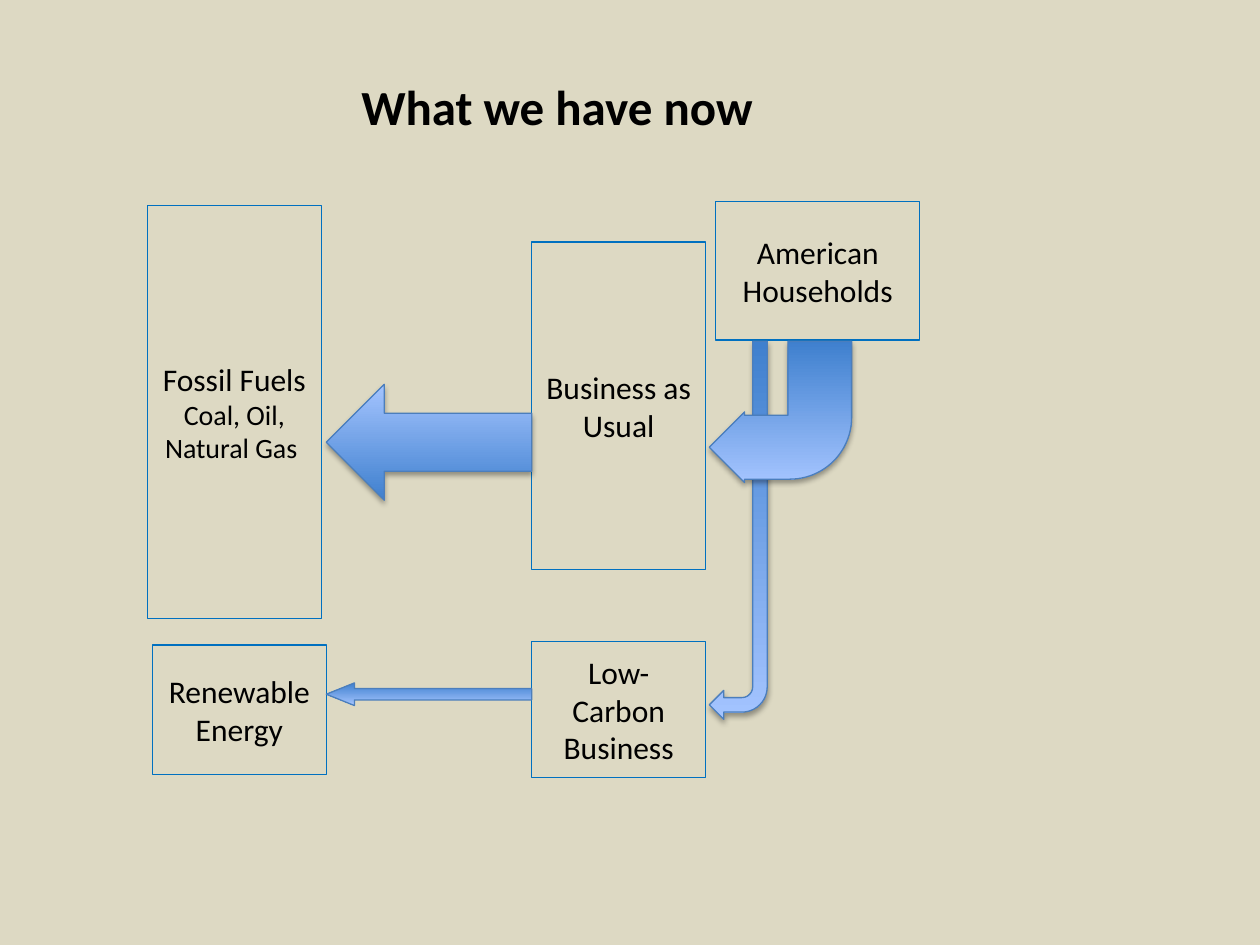
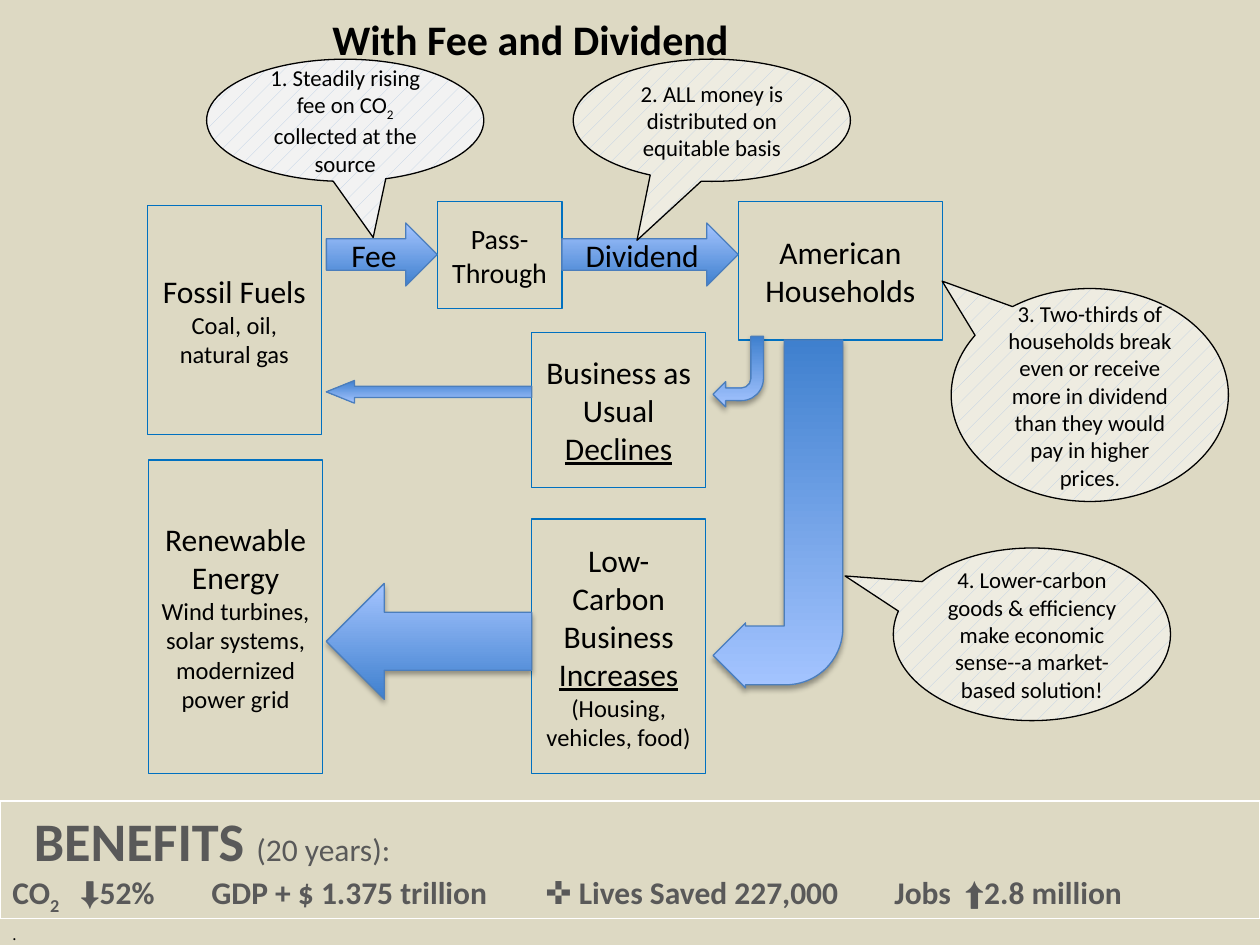
from lxml import etree
from pptx import Presentation
from pptx import util as u
from pptx.dml.color import RGBColor
from pptx.enum import dml, shapes, text
from pptx.oxml.ns import qn

SLIDE_W, SLIDE_H = 10, 7.5
FONT = "Calibri"
SAND = RGBColor(0xDD, 0xD9, 0xC3)
BLACK = RGBColor(0, 0, 0)
WHITE = RGBColor(0xFF, 0xFF, 0xFF)
GREY = RGBColor(0x59, 0x59, 0x59)
BOX_BLUE = RGBColor(0x00, 0x70, 0xC0)
ARROW_DARK = RGBColor(0x3F, 0x80, 0xCE)
ARROW_LIGHT = RGBColor(0xA4, 0xC4, 0xFF)
ARROW_EDGE = RGBColor(0x4B, 0x7E, 0xBC)
HATCH = RGBColor(0xB9, 0xCD, 0xE5)
PALE = RGBColor(0xF2, 0xF2, 0xF2)
CREAM = RGBColor(0xEE, 0xEC, 0xE1)

KIND = shapes.MSO_SHAPE

# Columns of the diagram: (left, width)
ENERGY = (1.17, 1.38)
BUSINESS = (4.22, 1.38)
FLOW = (2.59, 1.63)       # between energy and business
FEE = (2.59, 0.88)
PASS_THROUGH = (3.47, 0.99)
DIVIDEND = (4.46, 1.4)
CALLOUT_W = 2.2

# Arrow proportions
WIDE, NARROW = 0.92, 0.18
NARROW_HEAD = [0.5, 1.242]
WIDE_BEND = [0.452, 0.25, 0.25, 0.438]

# Text: paragraphs of runs (text, size, style), style being "", "u", "b" or "sub"
# Boxes: (column, top, height, paragraphs)
# Flows: (top, height); bends: (left, top, width, height, adjustments)
NOW = {
    "title": ("What we have now", 28, (1.2, 0.56, 6.44, 0.57)),
    "boxes": [
        (ENERGY, 1.63, 3.28, [[("Fossil Fuels", 18, "")],
                              [("Coal, Oil, Natural Gas ", 16, "")]]),
        ((1.21, 1.38), 5.12, 1.03, [[("Renewable Energy", 18, "")]]),
        ((5.68, 1.62), 1.6, 1.1, [[("American Households", 18, "")]]),
        (BUSINESS, 1.92, 2.6, [[("Business as Usual", 18, "")]]),
        (BUSINESS, 5.09, 1.08, [[("Low- Carbon Business", 18, "")]]),
    ],
    "payments": [],
    "bends": [(5.63, 2.71, 0.46, 3, []), (5.63, 2.71, 1.13, 1.12, WIDE_BEND)],
    "flows": [(3.05, WIDE), (5.42, NARROW)],
    "callouts": [],
}

DIVIDEND_PLAN = {
    "title": ("With Fee and Dividend", 24, (0.99, 0.06, 6.44, 0.5)),
    "boxes": [
        (ENERGY, 1.63, 1.82, [[("Fossil Fuels ", 18, "")],
                              [("Coal, oil, natural gas", 14, "")]]),
        ((1.18, 1.38), 3.65, 2.49, [
            [("Renewable Energy", 18, "")],
            [("Wind turbines, solar systems, modernized power grid", 14, "")]]),
        (PASS_THROUGH, 1.6, 0.85, [[("Pass-", 16, "")], [("Through", 16, "")]]),
        ((5.86, 1.62), 1.6, 1.1, [[("American Households", 18, "")]]),
        (BUSINESS, 2.64, 1.23, [[("Business as Usual ", 18, ""), ("Declines", 18, "u")]]),
        (BUSINESS, 4.12, 2.02, [
            [("Low-Carbon Business ", 18, ""), ("Increases", 18, "u")],
            [("(Housing, vehicles, food)", 14, "")]]),
    ],
    "payments": [(FEE, "Fee"), (DIVIDEND, "Dividend")],
    "bends": [(5.66, 2.67, 0.4, 0.56, []), (5.66, 2.7, 1.03, 2.76, WIDE_BEND)],
    "flows": [(4.63, WIDE), (3.02, NARROW)],
    # (left, top, height, tip of the tail, background, runs)
    "callouts": [
        (1.64, 0.47, 0.97, (0.101, 0.959), PALE,
         [("1. Steadily rising fee on CO", 13, ""), ("2 ", 13, "sub"),
          ("collected at the source", 13, "")]),
        (4.55, 0.47, 0.97, (-0.27, 0.982), CREAM,
         [("2. ALL money is distributed on equitable basis", 13, "")]),
        (7.55, 2.29, 1.69, (-0.533, -0.535), CREAM,
         [("3. Two-thirds of households break even or receive more in "
           "dividend than they would pay in higher prices", 13, ""), (".", 12, "")]),
        (7.09, 4.35, 1.37, (-0.674, -0.338), CREAM,
         [("4. Lower-carbon goods & efficiency make economic "
           "sense--a market-based solution!", 13, "")]),
    ],
}

BENEFITS = [
    [("BENEFITS ", 31, "b"), ("(20 years):", 18, "")],
    [("CO", 18, "b"), ("2", 18, "sub b"), ("\t", 18, "b"), ("⬇", 18, "b"),
     ("52%\tGDP + $ 1.375 trillion\t", 18, "b"), ("✜", 18, "b"),
     (" Lives Saved 227,000\tJobs\t", 18, "b"), ("⬆", 18, "b"),
     ("2.8 million", 18, "b")],
]
SYMBOLS = "⬇✜⬆"
BENEFIT_TABS = [0.54, 1.58, 4.23, 7.0, 7.56]
BAND_TOP, BAND_H = 6.36, 0.93


def write(frame, paragraphs, colour=BLACK, align=text.PP_ALIGN.CENTER, font=FONT):
    frame.word_wrap = True
    for i, runs in enumerate(paragraphs):
        paragraph = frame.add_paragraph() if i else frame.paragraphs[0]
        paragraph.alignment = align
        for words, size, style in runs:
            run = paragraph.add_run()
            run.text = words
            run.font.name = "Arial" if words in SYMBOLS else font
            run.font.size = u.Pt(size)
            run.font.color.rgb = colour
            run.font.bold = "b" in style.split()
            run.font.underline = style == "u"
            if "sub" in style:
                run.font._element.set("baseline", "-25000")


def add_part(slide, kind, left, top, width, height, edge, adjust=(), weight=0.75):
    part = slide.shapes.add_shape(kind, *map(u.Inches, (left, top, width, height)))
    part.shadow.inherit = False
    part.fill.background()
    part.line.color.rgb = edge
    part.line.width = u.Pt(weight)
    for i, value in enumerate(adjust):
        part.adjustments[i] = value
    return part


def add_arrow(slide, kind, place, adjust=(), flip="", shadow=False):
    arrow = add_part(slide, kind, *place, ARROW_EDGE, adjust)
    arrow.fill.gradient()
    arrow.fill.gradient_angle = 90
    for stop, colour in zip(arrow.fill.gradient_stops, (ARROW_DARK, ARROW_LIGHT)):
        stop.color.rgb = colour
    properties = arrow._element.spPr
    for axis in flip:
        properties.find(qn("a:xfrm")).set("flip" + axis, "1")
    if shadow:
        cast = etree.SubElement(
            properties.find(qn("a:effectLst")), qn("a:outerShdw"), blurRad="40000",
            dist="23000", dir="5400000", rotWithShape="0")
        tint = etree.SubElement(cast, qn("a:srgbClr"), val="000000")
        etree.SubElement(tint, qn("a:alpha"), val="35000")
    return arrow


def add_title(slide, words, size, place):
    title = slide.shapes.title
    title.left, title.top, title.width, title.height = map(u.Inches, place)
    title.text_frame.vertical_anchor = text.MSO_ANCHOR.TOP
    title.text_frame.auto_size = text.MSO_AUTO_SIZE.NONE
    write(title.text_frame, [[(words, size, "b")]])


def add_diagram(slide, plan):
    add_title(slide, *plan["title"])
    for (left, width), top, height, paragraphs in plan["boxes"]:
        box = add_part(slide, KIND.RECTANGLE, left, top, width, height, BOX_BLUE)
        write(box.text_frame, paragraphs)
    for (left, width), label in plan["payments"]:
        payment = add_arrow(slide, KIND.RIGHT_ARROW, (left, 1.77, width, 0.5))
        write(payment.text_frame, [[(label, 18, "")]])
    for *place, adjust in plan["bends"]:
        add_arrow(slide, KIND.BENT_ARROW, place, adjust, "HV", shadow=True)
    for top, height in plan["flows"]:
        place = (FLOW[0], top, FLOW[1], height)
        if height == WIDE:
            add_arrow(slide, KIND.LEFT_ARROW, place, shadow=True)
        else:
            add_arrow(slide, KIND.LEFT_ARROW, place, NARROW_HEAD, "V")
    for left, top, height, tip, ground, runs in plan["callouts"]:
        callout = add_part(slide, KIND.OVAL_CALLOUT, left, top, CALLOUT_W, height,
                           BLACK, tip)
        callout.fill.patterned()
        callout.fill.pattern = dml.MSO_PATTERN.PERCENT_5
        callout.fill.fore_color.rgb = HATCH
        callout.fill.back_color.rgb = ground
        write(callout.text_frame, [runs])


def add_benefits(slide):
    band = add_part(slide, KIND.RECTANGLE, 0, BAND_TOP, SLIDE_W, BAND_H, WHITE, weight=1)
    frame = band.text_frame
    frame.vertical_anchor = text.MSO_ANCHOR.TOP
    write(frame, BENEFITS, GREY, text.PP_ALIGN.LEFT)
    heading, figures = (p._p.get_or_add_pPr() for p in frame.paragraphs)
    heading.set("marL", str(u.Inches(0.17)))
    stops = etree.SubElement(figures, qn("a:tabLst"))
    for position in BENEFIT_TABS:
        etree.SubElement(stops, qn("a:tab"), pos=str(u.Inches(position)), algn="l")

    # Line under the band
    footer = slide.shapes.add_textbox(
        *map(u.Inches, (0, BAND_TOP + BAND_H, SLIDE_W, 0.25)))
    write(footer.text_frame, [[(".", 9, "")]], align=text.PP_ALIGN.LEFT, font="Noto Sans")


def main():
    deck = Presentation()
    deck.slide_width, deck.slide_height = u.Inches(SLIDE_W), u.Inches(SLIDE_H)
    ground = deck.slide_master.background.fill
    ground.solid()
    ground.fore_color.rgb = SAND
    title_only = deck.slide_layouts[5]
    for plan in (NOW, DIVIDEND_PLAN):
        slide = deck.slides.add_slide(title_only)
        add_diagram(slide, plan)
    add_benefits(slide)
    deck.save("out.pptx")


if __name__ == "__main__":
    main()
